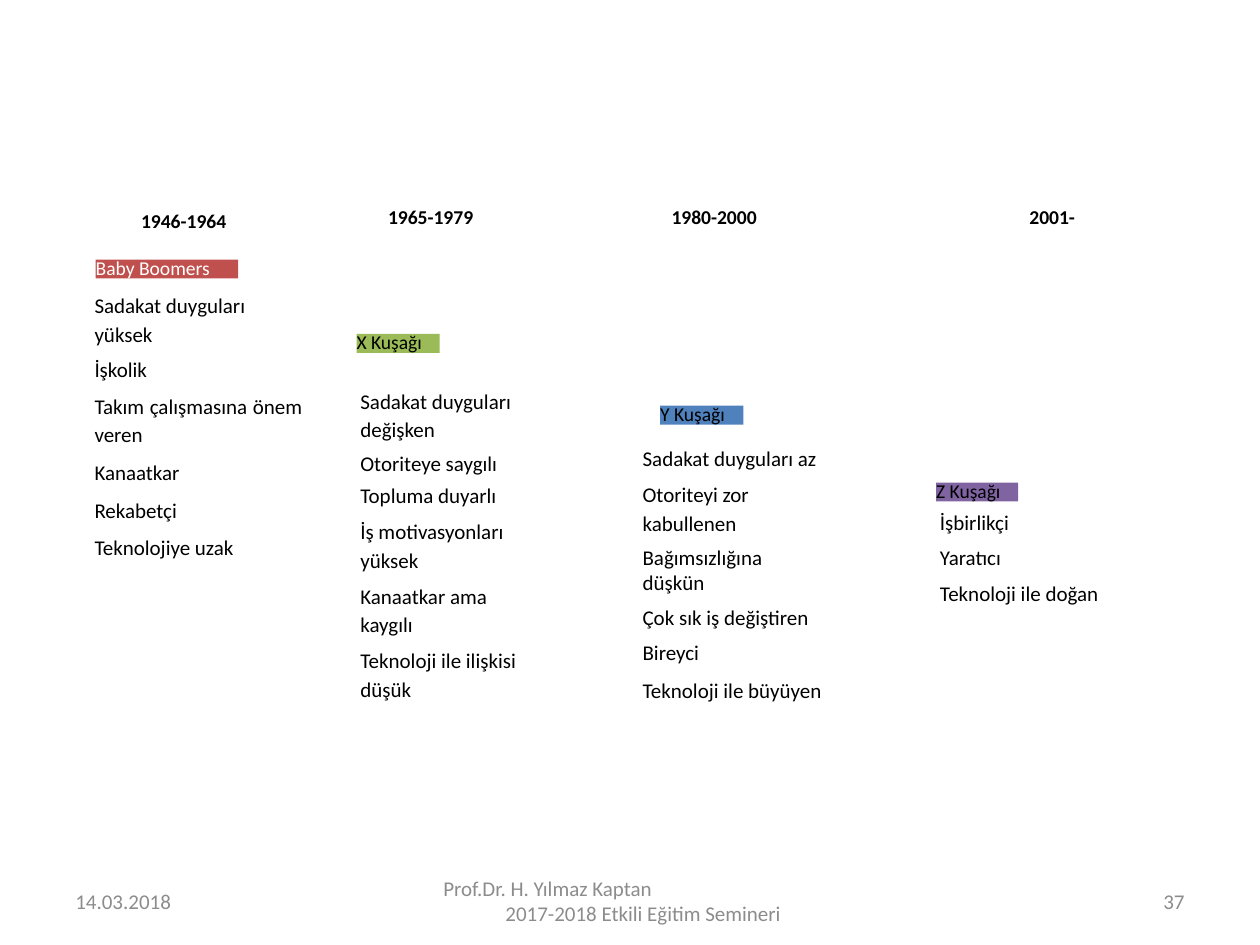
from pptx import Presentation
from pptx.dml.color import RGBColor
from pptx.enum.shapes import MSO_SHAPE
from pptx.enum.text import MSO_ANCHOR, MSO_AUTO_SIZE, PP_ALIGN
from pptx.oxml import parse_xml
from pptx.oxml.ns import nsdecls
from pptx.util import Inches, Pt

LEFT, CENTER, RIGHT, JUSTIFY = PP_ALIGN.LEFT, PP_ALIGN.CENTER, PP_ALIGN.RIGHT, PP_ALIGN.JUSTIFY
TOP, MIDDLE = MSO_ANCHOR.TOP, MSO_ANCHOR.MIDDLE
RECT = MSO_SHAPE.RECTANGLE
NO_FIT = MSO_AUTO_SIZE.NONE

COLUMNS, ROWS = 100, 75

GENERATIONS = [
    dict(years="1946-1964", years_at=(11.2, 16.9, 8.3),
         name="Baby Boomers", name_at=(7.6, 20.6, 11.3), fill="C0504E", color="FFFFFF",
         traits_at=(7.5, 23, 16.5, 21.3),
         traits=[("Sadakat duyguları yüksek", 16.2, 7.9, LEFT),
                 ("İşkolik", 12, 5.2, JUSTIFY),
                 ("Takım çalışmasına önem veren", 16.2, 0.3, JUSTIFY),
                 ("Kanaatkar", 21.4, 0, JUSTIFY),
                 ("Rekabetçi", 21.4, 0, JUSTIFY),
                 ("Teknolojiye uzak", 21.4, 0, JUSTIFY)]),
    dict(years="1965-1979", years_at=(30.8, 16.6, 8.3),
         name="X Kuşağı", name_at=(28.3, 26.5, 6.6), fill="9BBB58", color="000000",
         traits_at=(28.6, 30.6, 14.1, 25.2),
         traits=[("Sadakat duyguları değişken", 16, 7.7, LEFT),
                 ("Otoriteye saygılı", 12, 6.4, JUSTIFY),
                 ("Topluma duyarlı", 12, 4.2, JUSTIFY),
                 ("İş motivasyonları yüksek", 16.2, 4.5, LEFT),
                 ("Kanaatkar ama kaygılı", 16.2, 4.5, LEFT),
                 ("Teknoloji ile ilişkisi düşük", 16.2, 0, LEFT)]),
    dict(years="1980-2000", years_at=(53.3, 16.6, 8.3),
         name="Y Kuşağı", name_at=(52.4, 32.2, 6.6), fill="4F81BC", color="000000",
         traits_at=(51, 35.1, 15, 20.8),
         traits=[("Sadakat duyguları az", 16.2, 4.5, LEFT),
                 ("Otoriteyi zor kabullenen", 16.2, 7.9, LEFT),
                 ("Bağımsızlığına", 12, 1.9, LEFT),
                 ("düşkün", 12, 8.4, LEFT),
                 ("Çok sık iş değiştiren", 12, 7.9, LEFT),
                 ("Bireyci", 12, 5, LEFT),
                 ("Teknoloji ile büyüyen", 16.4, 0, LEFT)]),
    dict(years="2001-", years_at=(81.7, 16.6, 4.6),
         name="Z Kuşağı", name_at=(74.3, 38.3, 6.5), fill="8064A1", color="000000",
         traits_at=(74.6, 40.8, 14.3, 7.4),
         traits=[("İşbirlikçi", 12, 7.9, LEFT),
                 ("Yaratıcı", 12, 8.6, LEFT),
                 ("Teknoloji ile doğan", 12, 0, LEFT)]),
]


def rgb(hex_color):
    return RGBColor.from_string(hex_color)


def write(p, text, size=12, color="000000", bold=False, align=LEFT, line=None, after=0, indent=0):
    pPr = p._p.get_or_add_pPr()
    pPr.set("marL", str(Inches(indent)))
    pPr.set("indent", "0")
    pPr.append(parse_xml(f"<a:buNone {nsdecls('a')}/>"))
    p.alignment = align
    p.space_before, p.space_after = Pt(0), Pt(after)
    if line:
        p.line_spacing = Pt(line)
    r = p.add_run()
    r.text = text
    r.font.name, r.font.size, r.font.bold = "Calibri", Pt(size), bold
    r.font.color.rgb = rgb(color)


class Deck:
    label_size = 11.2
    label_rows = 1.5
    footer_color = "8C8C8C"

    def __init__(self, prs, layout):
        self.cell_w, self.cell_h = prs.slide_width / COLUMNS, prs.slide_height / ROWS
        self.s = prs.slides.add_slide(prs.slide_layouts[layout])

    def place(self, x, y, w, h):
        return [int(v) for v in (x * self.cell_w, y * self.cell_h, w * self.cell_w, h * self.cell_h)]

    def frame(self, sp, anchor=TOP, margin=0.0):
        tf = sp.text_frame
        tf.word_wrap, tf.auto_size, tf.vertical_anchor = True, NO_FIT, anchor
        tf.margin_left = tf.margin_right = Inches(margin)
        tf.margin_top = tf.margin_bottom = Inches(margin / 2)
        return tf

    def years(self, text, at):
        sp = self.s.shapes.add_textbox(*self.place(*at, self.label_rows))
        write(self.frame(sp).paragraphs[0], text, size=self.label_size, bold=True, line=self.label_size)

    def name(self, text, at, fill, color):
        sp = self.s.shapes.add_shape(RECT, *self.place(*at, self.label_rows))
        sp.shadow.inherit = False
        sp.fill.solid()
        sp.fill.fore_color.rgb = rgb(fill)
        sp.line.fill.background()
        write(self.frame(sp).paragraphs[0], text, size=self.label_size, color=color, line=self.label_size)

    def traits(self, sp, at, items):
        sp.left, sp.top, sp.width, sp.height = self.place(*at)
        tf = self.frame(sp)
        for i, (text, line, after, align) in enumerate(items):
            p = tf.add_paragraph() if i else tf.paragraphs[0]
            write(p, text, line=line, after=after, align=align)

    def footer(self, at, *lines):
        sp = self.s.shapes.add_textbox(*self.place(*at, 4))
        tf = self.frame(sp, anchor=MIDDLE, margin=0.1)
        for i, (text, align, indent) in enumerate(lines):
            p = tf.add_paragraph() if i else tf.paragraphs[0]
            write(p, text, color=self.footer_color, align=align, indent=indent)


def main():
    prs = Presentation()
    prs.slide_width, prs.slide_height = Inches(10), Inches(7.5)
    deck = Deck(prs, layout=4)
    title, *bodies = list(deck.s.placeholders)
    title.element.getparent().remove(title.element)
    for body, g in zip(bodies, GENERATIONS):
        deck.years(g["years"], g["years_at"])
        deck.name(g["name"], g["name_at"], g["fill"], g["color"])
        deck.traits(body, g["traits_at"], g["traits"])
    deck.footer((71.7, 69.5, 23.3), ("37", RIGHT, 0))
    deck.footer((5, 69.5, 23.3), ("14.03.2018", LEFT, 0))
    deck.footer((34.2, 69.5, 31.7), ("Prof.Dr. H. Yılmaz Kaptan", LEFT, 0),
                ("2017-2018 Etkili Eğitim Semineri", CENTER, 0.2))
    prs.save("out.pptx")


if __name__ == "__main__":
    main()
